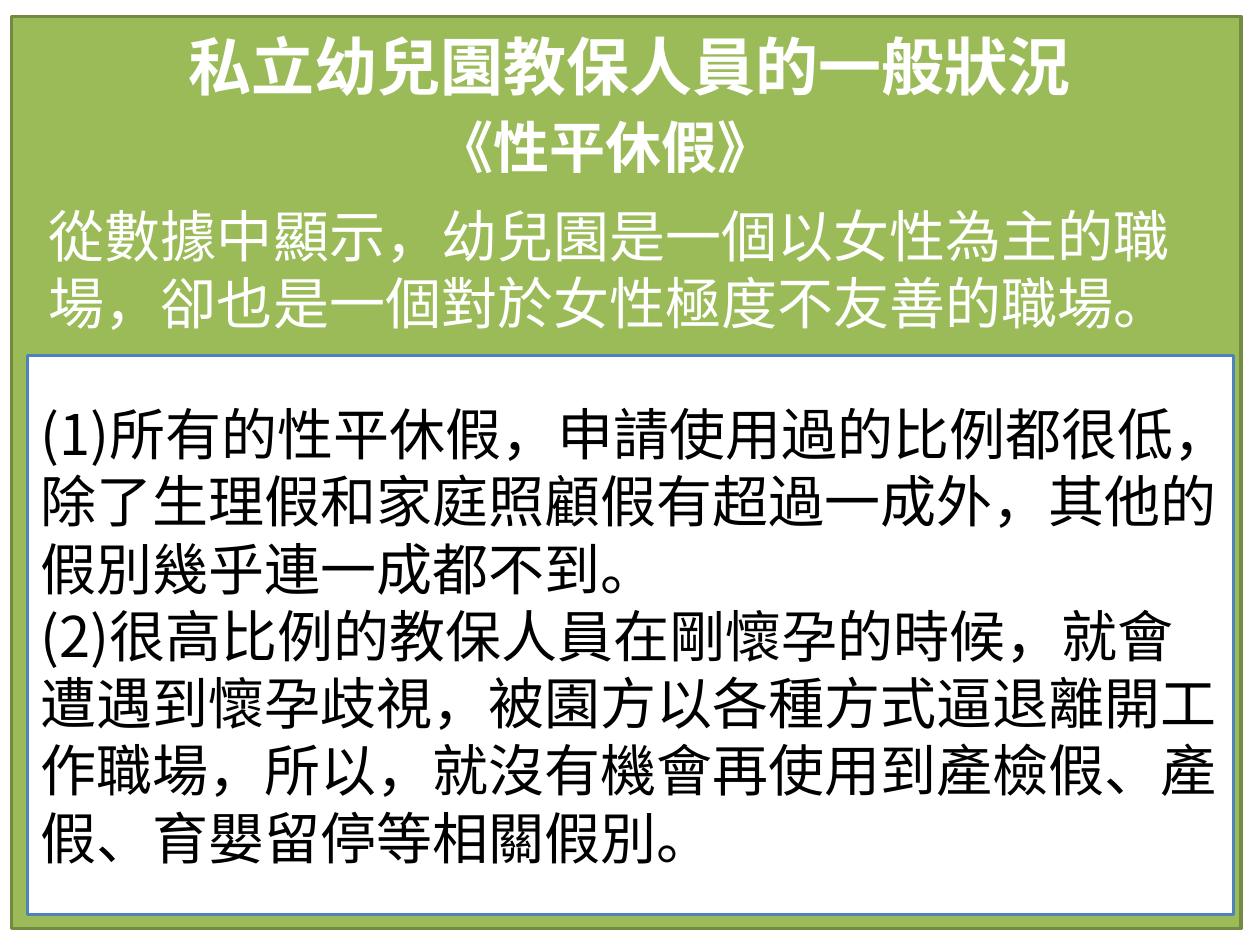
from lxml import etree
from pptx import Presentation
from pptx import util as u
from pptx.dml.color import RGBColor
from pptx.enum import shapes, text
from pptx.oxml.ns import qn

FONT = "Noto Sans CJK SC"
WHITE, BLACK = "FFFFFF", "000000"

# Content: place is left, top, width, height in inches
PANELS = {
    "backdrop": dict(place=(0, 0, 10, 7.5), fill=WHITE, line=WHITE),
    "frame": dict(place=(0.09, 0.13, 9.76, 7.24), fill="9BBB59", line="738A42"),
    "findings": dict(place=(0.22, 2.82, 9.57, 4.44), fill=WHITE, line="4F81BD"),
}
FINDINGS = [
    "(1)所有的性平休假，申請使用過的比例都很低，除了生理假和家庭照顧假有超過一成外，"
    "其他的假別幾乎連一成都不到。",
    "(2)很高比例的教保人員在剛懷孕的時候，就會遭遇到懷孕歧視，被園方以各種方式逼退離開工作職場，"
    "所以，就沒有機會再使用到產檢假、產假、育嬰留停等相關假別。",
]
HEADINGS = [
    dict(lines=["私立幼兒園教保人員的一般狀況"], place=(0.5, 0.13, 9, 0.77),
         size=36, bold=True, align="CENTER", anchor="MIDDLE"),
    dict(lines=["《性平休假》"], place=(3.37, 0.84, 2.89, 0.64), bold=True, wrap=False),
    dict(lines=["從數據中顯示，幼兒園是一個以女性為主的職場，卻也是一個對於女性極度不友善的職場。"],
         place=(0.29, 1.55, 9.35, 1.18)),
]


def color(value):
    return RGBColor.from_string(value)


def inches(place):
    return [u.Inches(length) for length in place]


def write(shape, lines, size=32, bold=False, ink=WHITE, align="LEFT",
          anchor="TOP", wrap=True):
    frame = shape.text_frame
    frame.word_wrap = wrap
    frame.vertical_anchor = text.MSO_ANCHOR[anchor]
    for index, line in enumerate(lines):
        paragraph = frame.add_paragraph() if index else frame.paragraphs[0]
        paragraph.alignment = text.PP_ALIGN[align]
        run = paragraph.add_run()
        run.text = line
        font = run.font
        font.size, font.bold, font.name = u.Pt(size), bold, FONT
        font.color.rgb = color(ink)
        # East Asian typeface
        etree.SubElement(run._r.get_or_add_rPr(), qn("a:ea"), typeface=FONT)


def add_panel(slide, place, fill, line):
    shape = slide.shapes.add_shape(shapes.MSO_SHAPE.RECTANGLE, *inches(place))
    shape.shadow.inherit = False
    shape.fill.solid()
    shape.fill.fore_color.rgb = color(fill)
    shape.line.color.rgb = color(line)
    shape.line.width = u.Pt(2)
    return shape


def main():
    presentation = Presentation()
    presentation.slide_width, presentation.slide_height = inches((10, 7.5))
    slide = presentation.slides.add_slide(presentation.slide_layouts[6])

    # Panels, back to front
    panels = {name: add_panel(slide, **panel) for name, panel in PANELS.items()}
    write(panels["findings"], FINDINGS, ink=BLACK, anchor="MIDDLE")

    # Title, subtitle and introduction
    for heading in HEADINGS:
        style = dict(heading)
        box = slide.shapes.add_textbox(*inches(style.pop("place")))
        write(box, **style)

    presentation.save("out.pptx")


if __name__ == "__main__":
    main()
